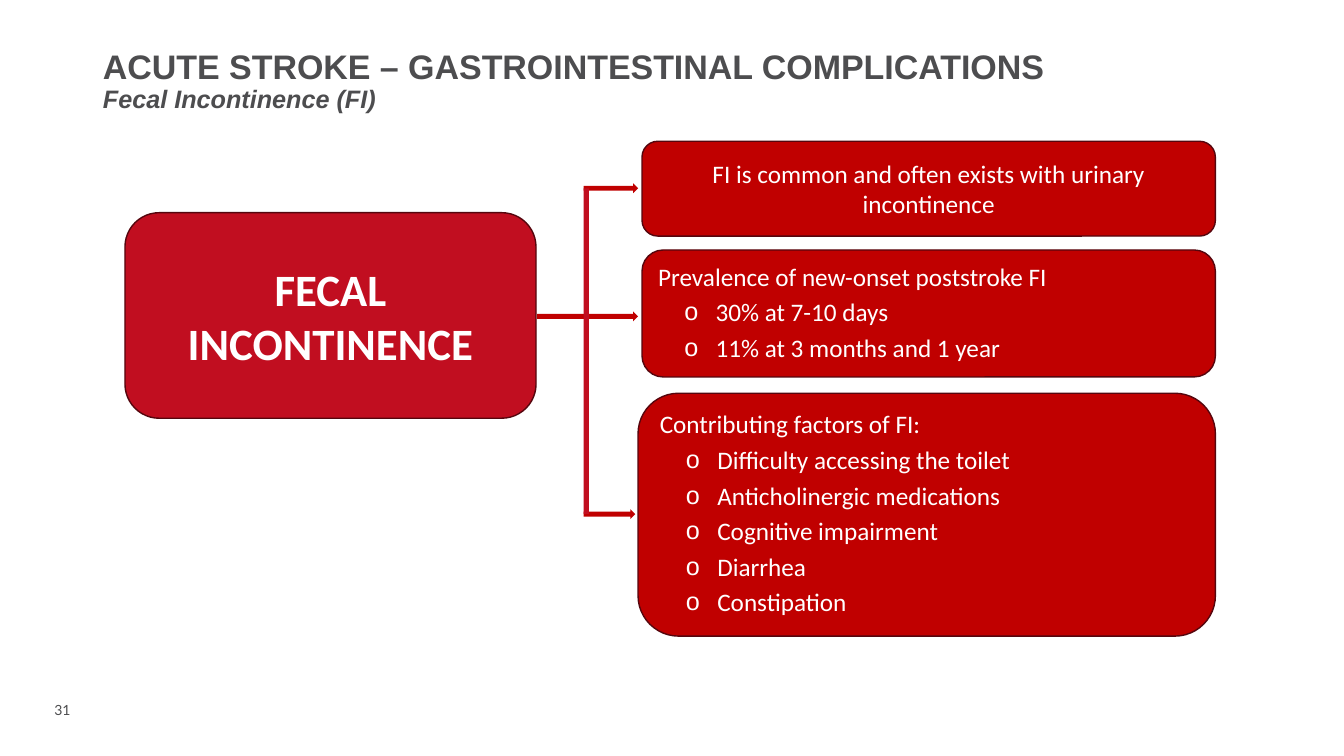
from lxml import etree
from pptx import Presentation
from pptx import util as u
from pptx.dml.color import RGBColor
from pptx.enum import shapes, text
from pptx.oxml.ns import qn

COLOURS = {"grey": "4D4D4F", "crimson": "C10E20", "red": "C00000",
           "edge": "55060E", "white": "FFFFFF"}
ANSWERS = [
    (16.18, 3.56, 14.45, 2.39, "FI is common and often exists with urinary incontinence", []),
    (16.18, 6.3, 14.45, 3.2, "Prevalence of new-onset poststroke FI",
     ["30% at 7-10 days", "11% at 3 months and 1 year"]),
    (16.08, 9.91, 14.55, 6.12, "Contributing factors of FI:",
     ["Difficulty accessing the toilet", "Anticholinergic medications",
      "Cognitive impairment", "Diarrhea", "Constipation"]),
]
ARROWS = [(13.54, 7.85, 2.54), (14.71, 4.62, 1.37), (14.71, 12.83, 1.3)]


def colour(name):
    return RGBColor.from_string(COLOURS[name])


def add_span(para, words, font, size, tint, bold=False, italic=False):
    span = para.add_run()
    span.text = words
    span.font.name = font
    span.font.size = u.Pt(size)
    span.font.bold = bold
    span.font.italic = italic
    span.font.color.rgb = colour(tint)


def add_block(page, kind, left, top, width, height, fill, edge=None):
    block = page.shapes.add_shape(kind, u.Cm(left), u.Cm(top), u.Cm(width), u.Cm(height))
    block.shadow.inherit = False
    block.fill.solid()
    block.fill.fore_color.rgb = colour(fill)
    if edge:
        block.line.color.rgb = colour(edge)
        block.line.width = u.Pt(1)
    else:
        block.line.fill.background()
    return block


def add_card(page, left, top, width, height, fill):
    card = add_block(page, shapes.MSO_SHAPE.FLOWCHART_ALTERNATE_PROCESS,
                     left, top, width, height, fill, "edge")
    frame = card.text_frame
    frame.word_wrap = True
    frame.vertical_anchor = text.MSO_ANCHOR.MIDDLE
    frame.paragraphs[0].alignment = text.PP_ALIGN.CENTER
    return frame


def add_bullet(frame, words):
    para = frame.add_paragraph()
    para.level = 1
    props = para._p.get_or_add_pPr()
    props.set("marL", str(u.Cm(1.45)))
    props.set("indent", str(u.Cm(-0.79)))
    etree.SubElement(props, qn("a:buFont")).set("typeface", "Arial")
    etree.SubElement(props, qn("a:buChar")).set("char", "o")
    para.alignment = text.PP_ALIGN.LEFT
    para.line_spacing = 0.9
    para.space_before = u.Pt(6)
    add_span(para, words, "Calibri", 18, "white")


def add_answer(page, left, top, width, height, heading, points):
    frame = add_card(page, left, top, width, height, "red")
    para = frame.paragraphs[0]
    add_span(para, heading, "Calibri", 18, "white")
    if points:
        para.alignment = text.PP_ALIGN.LEFT
        para.line_spacing = 0.9
    for point in points:
        add_bullet(frame, point)


def fill_title(page):
    title = page.shapes.title
    title.left, title.top = u.Cm(2.34), u.Cm(1.45)
    title.width, title.height = u.Cm(29.21), u.Cm(1.55)
    frame = title.text_frame
    frame.word_wrap = True
    frame.auto_size = text.MSO_AUTO_SIZE.NONE
    frame.vertical_anchor = text.MSO_ANCHOR.BOTTOM
    para = frame.paragraphs[0]
    para.alignment = text.PP_ALIGN.LEFT
    para.line_spacing = 0.9
    add_span(para, "ACUTE STROKE – GASTROINTESTINAL COMPLICATIONS", "Arial", 24.3, "grey", True)
    para.add_line_break()
    line_break = para._p.find(qn("a:br"))
    etree.SubElement(line_break, qn("a:rPr")).set("sz", "1800")
    add_span(para, "Fecal Incontinence (FI)", "Arial", 18, "grey", True, True)


def add_page_number(page):
    box = page.shapes.add_textbox(u.Cm(1.12), u.Cm(17.55), u.Cm(0.99), u.Cm(0.69))
    box.text_frame.word_wrap = False
    add_span(box.text_frame.paragraphs[0], "31", "Lato", 10, "grey")


def main():
    deck = Presentation()
    deck.slide_width, deck.slide_height = u.Cm(33.87), u.Cm(19.05)
    page = deck.slides.add_slide(deck.slide_layouts[5])
    add_page_number(page)
    fill_title(page)
    topic = add_card(page, 3.15, 5.36, 10.36, 5.18, "crimson")
    add_span(topic.paragraphs[0], "FECAL INCONTINENCE", "Calibri", 32, "white", True)
    for answer in ANSWERS:
        add_answer(page, *answer)
    for left, top, width in ARROWS:
        add_block(page, shapes.MSO_SHAPE.RIGHT_ARROW, left, top, width, 0.25, "red")
    add_block(page, shapes.MSO_SHAPE.RECTANGLE, 14.71, 4.75, 0.13, 8.2, "crimson")
    deck.save("out.pptx")


if __name__ == "__main__":
    main()
